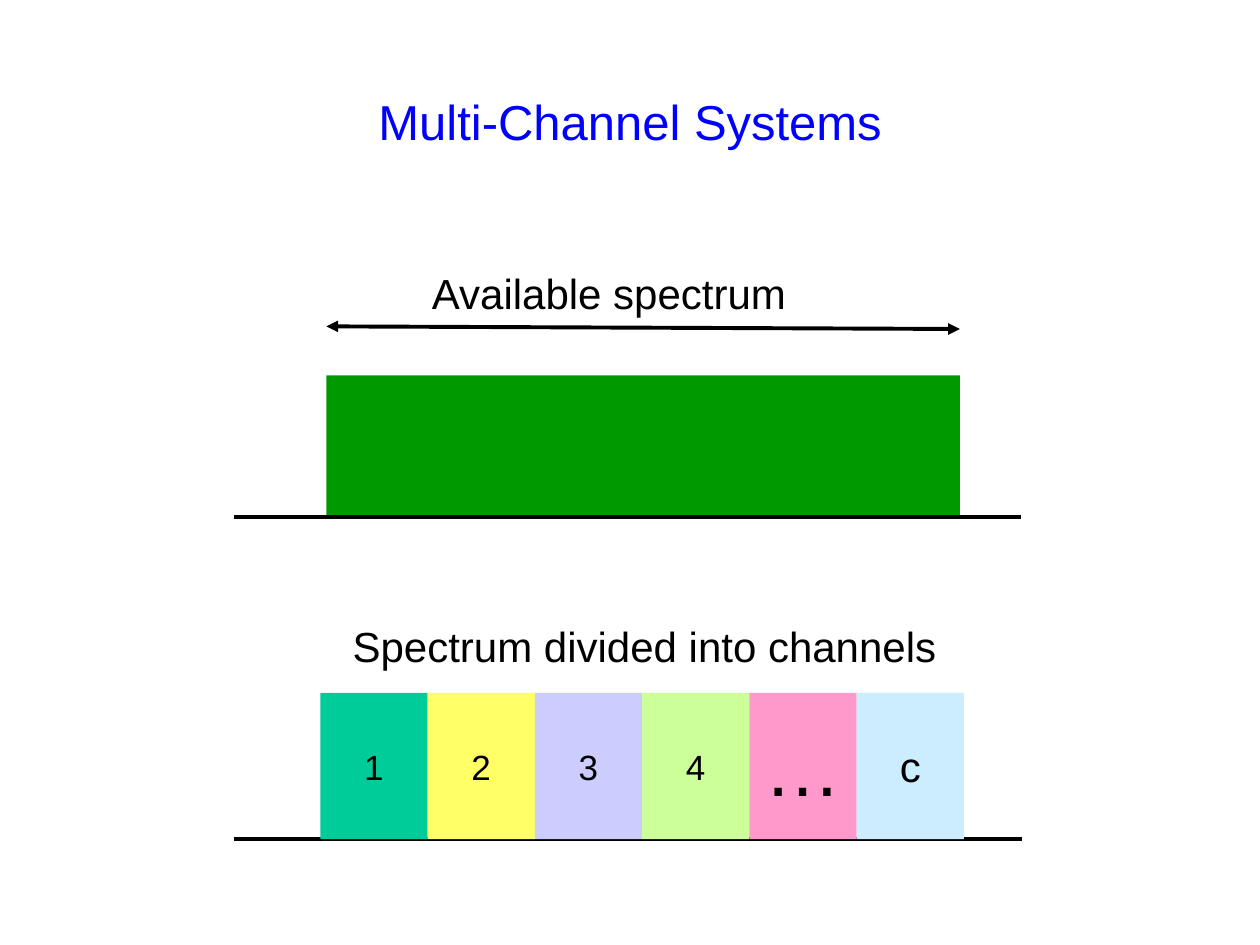
from pptx import Presentation
from pptx.dml.color import RGBColor as RGB
from pptx.enum.shapes import MSO_CONNECTOR as Conn, MSO_SHAPE as Kind
from pptx.enum.text import MSO_ANCHOR as Anchor, PP_ALIGN as Align
from pptx.oxml.ns import qn
from pptx.util import Pt
from lxml.etree import SubElement as sub


def color(code):
    return RGB.from_string(code)


class Board:
    font = "Arial"
    ink = "000000"
    weight = 2.25

    def __init__(self, slide):
        self.slide = slide

    def letter(self, shape, text, size, ink=None):
        """Put one centred line of text into a shape."""
        frame = shape.text_frame
        frame.word_wrap = False
        frame.vertical_anchor = Anchor.MIDDLE
        para = frame.paragraphs[0]
        para.text = text
        para.alignment = Align.CENTER
        para.font.name = self.font
        para.font.size = Pt(size)
        para.font.color.rgb = color(ink or self.ink)

    def label(self, x, y, w, h, text, size=24, ink=None):
        box = self.slide.shapes.add_textbox(Pt(x), Pt(y), Pt(w), Pt(h))
        self.letter(box, text, size, ink)

    def block(self, x, y, w, h, fill, text="", size=20):
        rect = self.slide.shapes.add_shape(
            Kind.RECTANGLE, Pt(x), Pt(y), Pt(w), Pt(h))
        rect.shadow.inherit = False
        rect.fill.solid()
        rect.fill.fore_color.rgb = color(fill)
        rect.line.fill.background()
        if text:
            self.letter(rect, text, size)

    def line(self, x1, y1, x2, y2, heads=False):
        link = self.slide.shapes.add_connector(
            Conn.STRAIGHT, Pt(x1), Pt(y1), Pt(x2), Pt(y2))
        link.line.width = Pt(self.weight)
        link.line.color.rgb = color(self.ink)
        props = link._element.spPr
        if heads:
            for end in ("a:headEnd", "a:tailEnd"):
                sub(props.find(qn("a:ln")), qn(end), type="triangle")
        sub(props, qn("a:effectLst"))


def main():
    deck = Presentation()
    deck.slide_width, deck.slide_height = Pt(720), Pt(540)
    board = Board(deck.slides.add_slide(deck.slide_layouts[6]))

    board.label(54, 24, 612, 90, "Multi-Channel Systems", 28, "0000FF")

    # Whole spectrum
    left, width = 186.5, 362
    board.block(left, 214.5, width, 82, "009900")
    board.line(134, 295.2, 583.5, 295.2)
    board.line(left, 186.5, left + width, 188, heads=True)
    board.label(234.5, 149.5, 227, 36, "Available spectrum")

    # Spectrum split into equal channels
    board.line(134, 479.5, 584, 479.5)
    board.label(left, 351, 363.5, 36, "Spectrum divided into channels")
    channels = [
        ("1", "00CC99", 20), ("2", "FFFF66", 20), ("3", "CCCCFF", 20),
        ("4", "CCFF99", 20), ("…", "FF99CC", 44), ("c", "CCECFF", 24),
    ]
    step = 61.3
    for i, (name, fill, size) in enumerate(channels):
        board.block(183 + i * step, 396, step, 83.5, fill, name, size)

    deck.save("out.pptx")


if __name__ == "__main__":
    main()
